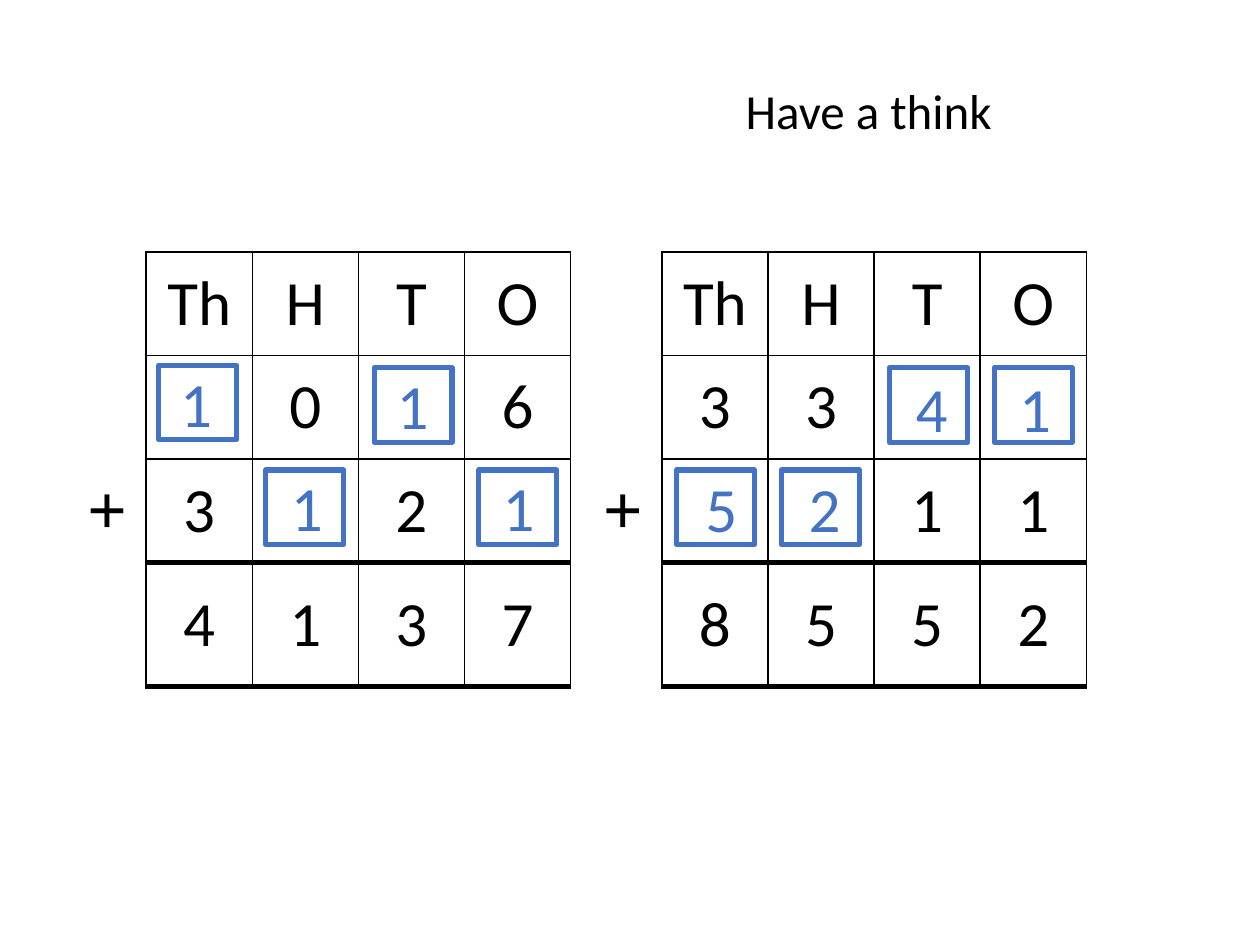
from dataclasses import dataclass

from lxml import etree
from pptx import Presentation
from pptx import util as u
from pptx.dml.color import RGBColor
from pptx.enum import shapes, text
from pptx.oxml.ns import qn

COLOURS = {"ink": "000000", "paper": "FFFFFF", "answer": "4472C4"}
TITLE = {"name": "Calibri", "size": u.Pt(28)}
DIGIT = {"name": "Calibri", "size": u.Pt(36)}
PLUS = {"name": "Times New Roman", "size": u.Pt(40), "bold": True}
FRAME = {"word_wrap": True, "auto_size": text.MSO_AUTO_SIZE.SHAPE_TO_FIT_TEXT}
PLAIN_TABLE = {"first_row": False, "horz_banding": False}
TABLE_TOP, COLUMN_WIDTH = 144, 60.65
ROW_HEIGHTS = (59.2, 59.2, 59.2, 70.6)
THIN, THICK = 1, 3


@dataclass(frozen=True)
class Answer:
    digit: str
    box_left: float
    box_top: float
    digit_left: float
    digit_top: float


@dataclass(frozen=True)
class Addition:
    left: float
    rows: tuple[str, ...]
    answers: tuple[Answer, ...]


ADDITIONS = (
    Addition(83.5, ("Th H T O", "_ 0 _ 6", "3 _ 2 _", "4 1 3 7"), (
        Answer("1", 90.7, 208.8, 95.8, 204.5),
        Answer("1", 213.8, 210.2, 219.6, 205.9),
        Answer("1", 151.9, 268.6, 159.1, 264.2),
        Answer("1", 273.6, 268.6, 280.1, 264.2),
    )),
    Addition(378.2, ("Th H T O", "3 3 _ _", "_ _ 1 1", "8 5 5 2"), (
        Answer("4", 508.3, 210.2, 516.2, 207.4),
        Answer("1", 568.1, 210.2, 575.3, 207.4),
        Answer("5", 386.6, 268.6, 396, 265),
        Answer("2", 446.4, 268.6, 455, 265),
    )),
)


def set_all(target, values: dict) -> None:
    """Set every named attribute on the target."""
    for name, value in values.items():
        setattr(target, name, value)


def colour(name: str) -> RGBColor:
    """Look up a named colour."""
    return RGBColor.from_string(COLOURS[name])


def write(para, words: str, font: dict, ink: str = "ink") -> None:
    """Add one formatted span to a paragraph."""
    span = para.add_run()
    span.text = words
    set_all(span.font, font)
    span.font.color.rgb = colour(ink)


def add_label(page, words: str, area: tuple[float, ...], font: dict, ink: str = "ink") -> None:
    """Add a text box at left, top, width and height."""
    box = page.shapes.add_textbox(*map(u.Pt, area))
    set_all(box.text_frame, FRAME)
    write(box.text_frame.paragraphs[0], words, font, ink)


def add_borders(cell, widths: dict[str, float]) -> None:
    """Draw solid borders of the given widths around a cell."""
    properties = cell._tc.get_or_add_tcPr()
    for index, (side, width) in enumerate(widths.items()):
        line = etree.Element(qn(f"a:ln{side}"), w=str(u.Pt(width)))
        fill = etree.SubElement(line, qn("a:solidFill"))
        etree.SubElement(fill, qn("a:srgbClr"), val=COLOURS["ink"])
        properties.insert(index, line)


def add_grid(page, addition: Addition) -> None:
    """Add the place value table of an addition."""
    words = [row.split() for row in addition.rows]
    count = len(words[0])
    area = (addition.left, TABLE_TOP, count * COLUMN_WIDTH, sum(ROW_HEIGHTS))
    table = page.shapes.add_table(len(words), count, *map(u.Pt, area)).table
    set_all(table, PLAIN_TABLE)
    for column in table.columns:
        column.width = u.Pt(COLUMN_WIDTH)
    for r, row in enumerate(words):
        table.rows[r].height = u.Pt(ROW_HEIGHTS[r])
        top = THICK if r == 3 else THIN
        bottom = THICK if r >= 2 else THIN
        for c, word in enumerate(row):
            cell = table.cell(r, c)
            cell.vertical_anchor = text.MSO_ANCHOR.MIDDLE
            cell.fill.solid()
            cell.fill.fore_color.rgb = colour("paper")
            add_borders(cell, {"L": THIN, "R": THIN, "T": top, "B": bottom})
            para = cell.text_frame.paragraphs[0]
            para.alignment = text.PP_ALIGN.CENTER
            if word != "_":
                write(para, word, DIGIT)


def add_answer(page, answer: Answer) -> None:
    """Add an outlined box and the missing digit inside it."""
    area = map(u.Pt, (answer.box_left, answer.box_top, 44.6, 42.5))
    box = page.shapes.add_shape(shapes.MSO_SHAPE.RECTANGLE, *area)
    box.shadow.inherit = False
    box.fill.background()
    box.line.color.rgb = colour("answer")
    box.line.width = u.Pt(3)
    area = (answer.digit_left, answer.digit_top, 33.1, 51)
    add_label(page, answer.digit, area, DIGIT, "answer")


def main() -> None:
    """Build the slide and save it."""
    deck = Presentation()
    set_all(deck, {"slide_width": u.Pt(720), "slide_height": u.Pt(540)})
    page = deck.slides.add_slide(deck.slide_layouts[6])
    add_label(page, "Have a think", (419, 42.5, 190.8, 41), TITLE)
    for addition in ADDITIONS:
        add_grid(page, addition)
        add_label(page, "+", (addition.left - 40.8, 262.1, 52.6, 55.4), PLUS)
        for answer in addition.answers:
            add_answer(page, answer)
    deck.save("out.pptx")


if __name__ == "__main__":
    main()
